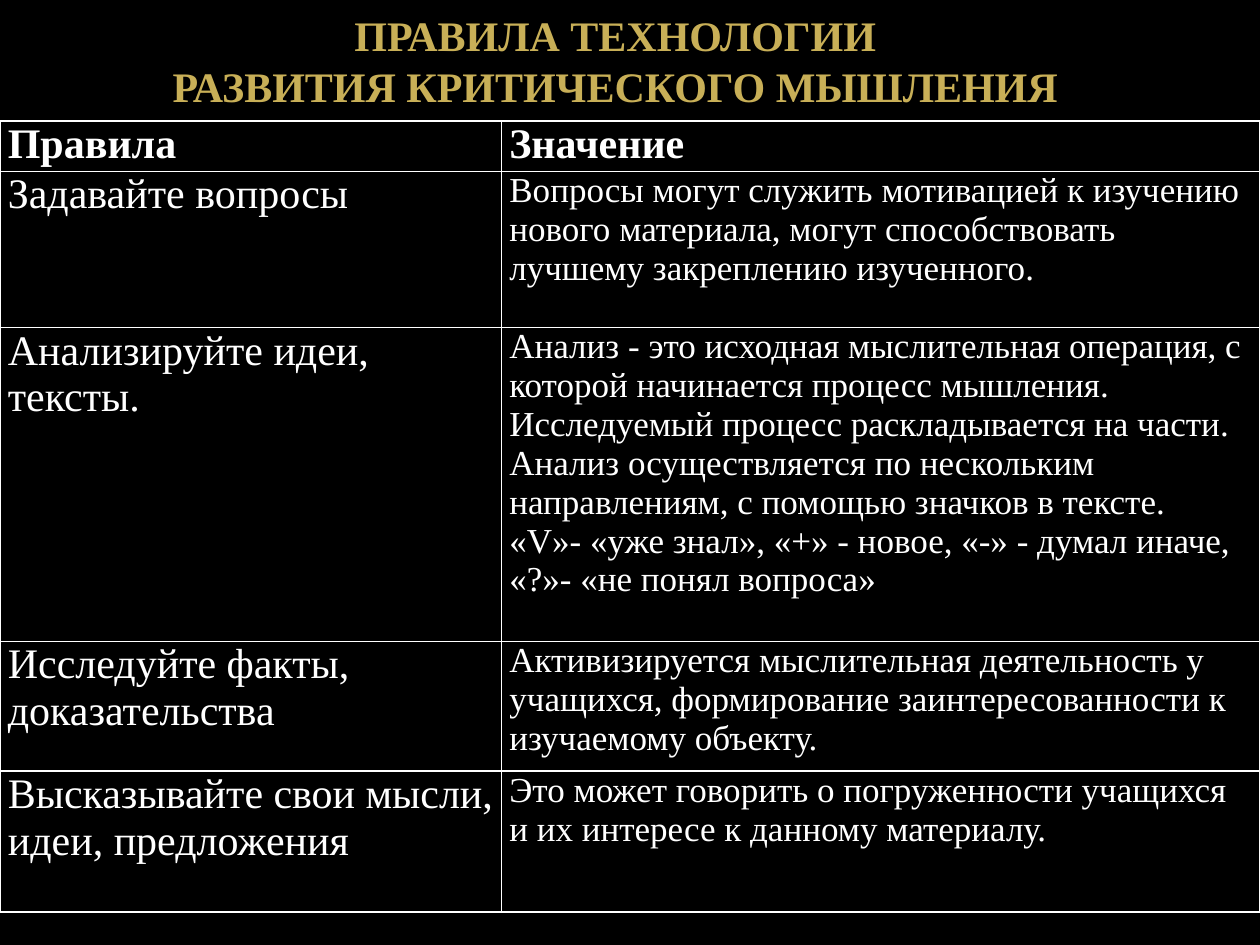
from lxml import etree
from pptx import Presentation
from pptx.dml.color import RGBColor
from pptx.enum.text import MSO_ANCHOR, PP_ALIGN
from pptx.oxml.ns import qn
from pptx.util import Pt

TOP = MSO_ANCHOR.TOP
CENTER = PP_ALIGN.CENTER
FONT = "Times New Roman"
COLORS = {
    "background": "000000",
    "text": "FFFFFF",
    "gold_light": "D4BF7A",
    "gold": "C8AF57",
    "gold_middle": "B8A148",
    "gold_dark": "A08D44",
    "gold_deep": "9D8B43",
}
TITLE_STOPS = [(0, "gold_light"), (49, "gold"), (50, "gold_middle"),
               (92, "gold_dark"), (100, "gold_deep")]
TITLE = "ПРАВИЛА ТЕХНОЛОГИИ \nРАЗВИТИЯ КРИТИЧЕСКОГО МЫШЛЕНИЯ "
COLUMN_WIDTHS = [286.6, 433.4]
ROW_HEIGHTS = [28.8, 89.3, 179.3, 74.2, 80.6]
ROWS = [
    ("Правила", "Значение"),
    ("Задавайте вопросы",
     "Вопросы могут служить мотивацией к изучению нового материала, "
     "могут способствовать лучшему закреплению изученного."),
    ("Анализируйте идеи, тексты.",
     "Анализ - это исходная мыслительная операция, с которой начинается "
     "процесс мышления. Исследуемый процесс раскладывается на части. "
     "Анализ осуществляется по нескольким направлениям, с помощью значков "
     "в тексте.\n"
     "«V»- «уже знал», «+» - новое, «-» - думал иначе, «?»- «не понял вопроса»"),
    ("Исследуйте факты, доказательства",
     "Активизируется мыслительная деятельность у учащихся, формирование "
     "заинтересованности к изучаемому объекту."),
    ("Высказывайте свои мысли, идеи, предложения",
     "Это может говорить о погруженности учащихся и их интересе к данному "
     "материалу."),
]


def color(name):
    return RGBColor.from_string(COLORS[name])


def write_text(text_frame, text, size, bold):
    text_frame.text = text
    runs = [run for paragraph in text_frame.paragraphs for run in paragraph.runs]
    for run in runs:
        run.font.name = FONT
        run.font.size = Pt(size)
        run.font.bold = bold
        run.font.color.rgb = color("text")
    return runs


def fill_with_gradient(run):
    run.font.fill.gradient()
    gradient = run.font._element.find(qn("a:gradFill"))
    stops = gradient.find(qn("a:gsLst"))
    for stop in list(stops):
        stops.remove(stop)
    for position, name in TITLE_STOPS:
        stop = etree.SubElement(stops, qn("a:gs"), pos=str(position * 1000))
        etree.SubElement(stop, qn("a:srgbClr"), val=COLORS[name])
    gradient.find(qn("a:lin")).set("ang", str(90 * 60000))


def add_borders(cell):
    properties = cell._tc.get_or_add_tcPr()
    for side in ("lnL", "lnR", "lnT", "lnB"):
        line = etree.SubElement(properties, qn(f"a:{side}"), w=str(Pt(1)))
        fill = etree.SubElement(line, qn("a:solidFill"))
        etree.SubElement(fill, qn("a:srgbClr"), val=COLORS["text"])


def format_cell(cell, text, size, bold):
    cell.margin_left = cell.margin_right = Pt(4.5)
    cell.margin_top = cell.margin_bottom = Pt(0)
    cell.vertical_anchor = TOP
    add_borders(cell)
    cell.fill.background()
    write_text(cell.text_frame, text, size, bold)


def add_rules_table(slide):
    frame = slide.shapes.add_table(
        len(ROWS), len(COLUMN_WIDTHS), Pt(0), Pt(69.1),
        Pt(sum(COLUMN_WIDTHS)), Pt(sum(ROW_HEIGHTS)))
    table = frame.table
    table.first_row = False
    table.horz_banding = False
    for column, width in zip(table.columns, COLUMN_WIDTHS):
        column.width = Pt(width)
    for row_index, (height, texts) in enumerate(zip(ROW_HEIGHTS, ROWS)):
        table.rows[row_index].height = Pt(height)
        is_header = row_index == 0
        for column_index, text in enumerate(texts):
            size = 24 if is_header or column_index == 0 else 20
            format_cell(table.cell(row_index, column_index), text, size, is_header)


def add_title(slide):
    shape = slide.shapes.add_textbox(Pt(39.6), Pt(0), Pt(630), Pt(87.1))
    text_frame = shape.text_frame
    text_frame.word_wrap = True
    text_frame.vertical_anchor = TOP
    text_frame.margin_top = Pt(5.6)
    for run in write_text(text_frame, TITLE, 24, True):
        fill_with_gradient(run)
    for paragraph in text_frame.paragraphs:
        paragraph.alignment = CENTER


def main():
    presentation = Presentation()
    presentation.slide_width = Pt(720)
    presentation.slide_height = Pt(540)
    slide = presentation.slides.add_slide(presentation.slide_layouts[6])
    slide.background.fill.solid()
    slide.background.fill.fore_color.rgb = color("background")
    add_rules_table(slide)
    add_title(slide)
    presentation.save("out.pptx")


if __name__ == "__main__":
    main()
